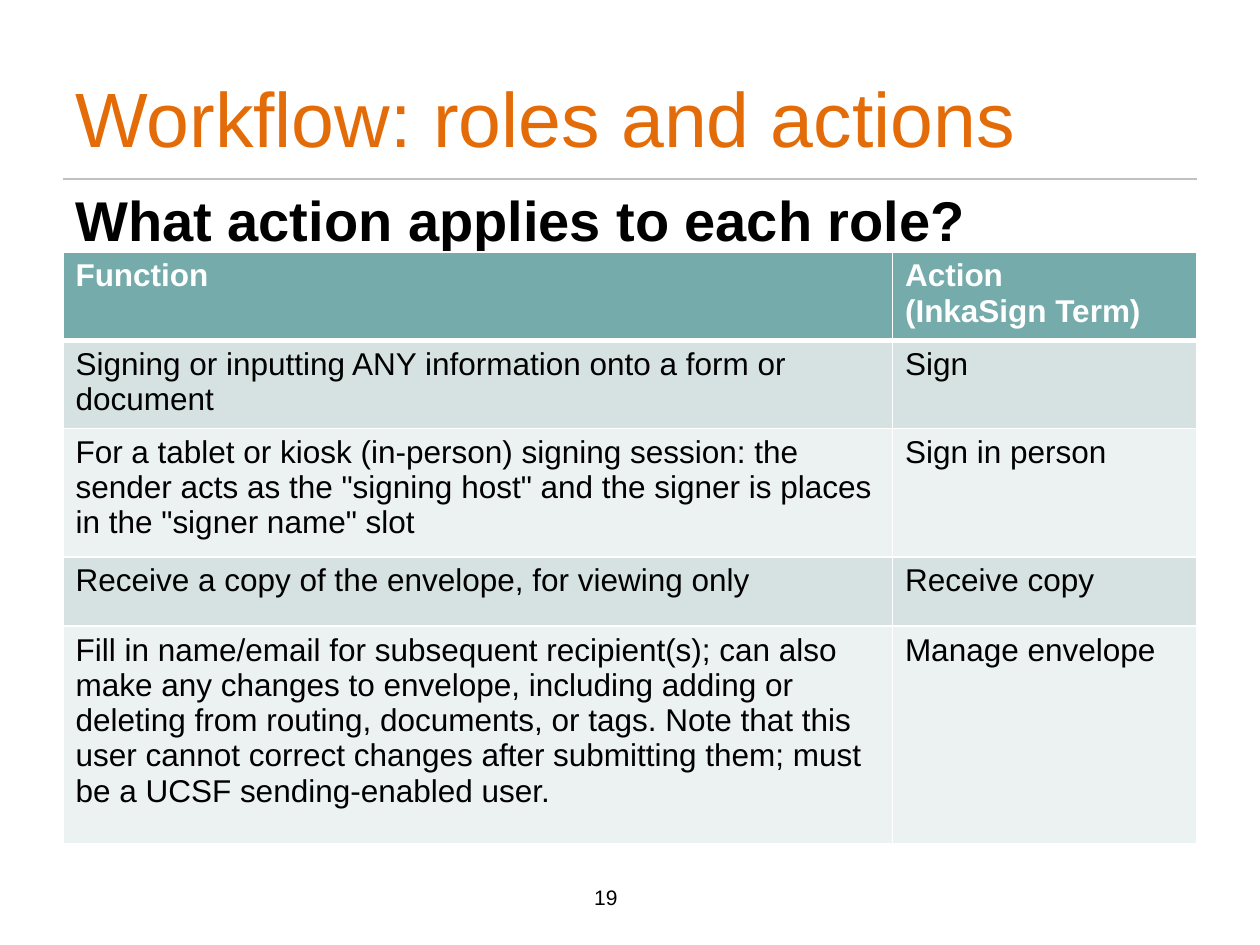
from lxml.etree import SubElement
from pptx import Presentation
from pptx.dml.color import RGBColor
from pptx.enum.shapes import MSO_CONNECTOR
from pptx.enum.text import MSO_ANCHOR, PP_ALIGN
from pptx.oxml.ns import qn
from pptx.util import Pt

COLORS = {
    "title": "E36C09",
    "text": "000000",
    "rule": "C0C0C0",
    "header": "75ABAB",
    "odd": "D6E2E2",
    "even": "ECF1F1",
    "white": "FFFFFF",
}
FONT = "Arial"
COLUMN_WIDTHS = [474, 174]
ROW_HEIGHTS = [49, 49, 73.5, 39.5, 124.5]
ROLE_ACTIONS = [
    ("Function", "Action\n(InkaSign Term)"),
    ("Signing or inputting ANY information onto a form or document", "Sign"),
    ('For a tablet or kiosk (in-person) signing session: the sender acts as the '
     '"signing host" and the signer is places in the "signer name" slot', "Sign in person"),
    ("Receive a copy of the envelope, for viewing only", "Receive copy"),
    ("Fill in name/email for subsequent recipient(s); can also make any changes to "
     "envelope, including adding or deleting from routing, documents, or tags. Note "
     "that this user cannot correct changes after submitting them; must be a UCSF "
     "sending-enabled user.", "Manage envelope"),
]


def color(name):
    """Return the named colour."""
    return RGBColor.from_string(COLORS[name])


def style_text(frame, size, color_name, bold=False, align=PP_ALIGN.LEFT):
    """Style every paragraph of a text frame."""
    for paragraph in frame.paragraphs:
        paragraph.alignment = align
        font = paragraph.font
        font.name, font.size, font.bold = FONT, Pt(size), bold
        font.color.rgb = color(color_name)


def add_text(slide, box, text, size, color_name, anchor=MSO_ANCHOR.MIDDLE, **style):
    """Place a wrapped line of text in the box."""
    frame = slide.shapes.add_textbox(*map(Pt, box)).text_frame
    frame.word_wrap = True
    frame.vertical_anchor = anchor
    frame.text = text
    style_text(frame, size, color_name, **style)


def add_rule(slide, left, top, width):
    """Draw a thin horizontal rule."""
    rule = slide.shapes.add_connector(
        MSO_CONNECTOR.STRAIGHT, Pt(left), Pt(top), Pt(left + width), Pt(top))
    rule.line.color.rgb = color("rule")
    rule.line.width = Pt(1.25)
    SubElement(rule._element.spPr, qn("a:effectLst"))


def add_borders(cell, top, bottom):
    """Give a cell white borders with the given top and bottom widths."""
    properties = cell._tc.get_or_add_tcPr()
    for side, width in (("L", 1), ("R", 1), ("T", top), ("B", bottom)):
        border = SubElement(properties, qn(f"a:ln{side}"), w=str(Pt(width)))
        fill = SubElement(border, qn("a:solidFill"))
        SubElement(fill, qn("a:srgbClr"), val=COLORS["white"])


def add_role_table(slide, left, top):
    """Build the table of functions and their actions."""
    table = slide.shapes.add_table(
        len(ROW_HEIGHTS), len(COLUMN_WIDTHS), Pt(left), Pt(top),
        Pt(sum(COLUMN_WIDTHS)), Pt(sum(ROW_HEIGHTS))).table
    for column, width in zip(table.columns, COLUMN_WIDTHS):
        column.width = Pt(width)
    for index, (row, height, texts) in enumerate(zip(table.rows, ROW_HEIGHTS, ROLE_ACTIONS)):
        row.height = Pt(height)
        header = index == 0
        band = "header" if header else "odd" if index % 2 else "even"
        for cell, text in zip(row.cells, texts):
            add_borders(cell, 3 if index == 1 else 1, 3 if header else 1)
            cell.fill.solid()
            cell.fill.fore_color.rgb = color(band)
            cell.text = text
            style_text(cell.text_frame, 18, "white" if header else "text", bold=header)


def add_heading(slide, left, top, width):
    """Place the title, its rule and the question below it."""
    add_text(slide, (left, top, width, 90), "Workflow: roles and actions", 44, "title")
    add_rule(slide, left, top + 80.5, width)
    add_text(slide, (left, top + 80.5, width, 44), "What action applies to each role?",
             32, "text", anchor=MSO_ANCHOR.TOP, bold=True)


def add_footer(slide, left, top, width):
    """Place the bottom rule and the slide number."""
    add_rule(slide, left, top, width)
    add_text(slide, (left + 294, top + 18, 30, 29), "19", 12, "text", align=PP_ALIGN.RIGHT)


def main():
    """Build and save the slide."""
    presentation = Presentation()
    presentation.slide_width, presentation.slide_height = Pt(720), Pt(540)
    slide = presentation.slides.add_slide(presentation.slide_layouts[6])
    add_heading(slide, 36, 21.75, 648)
    add_footer(slide, 36, 480.25, 648)
    add_role_table(slide, 36, 144)
    presentation.save("out.pptx")


if __name__ == "__main__":
    main()
